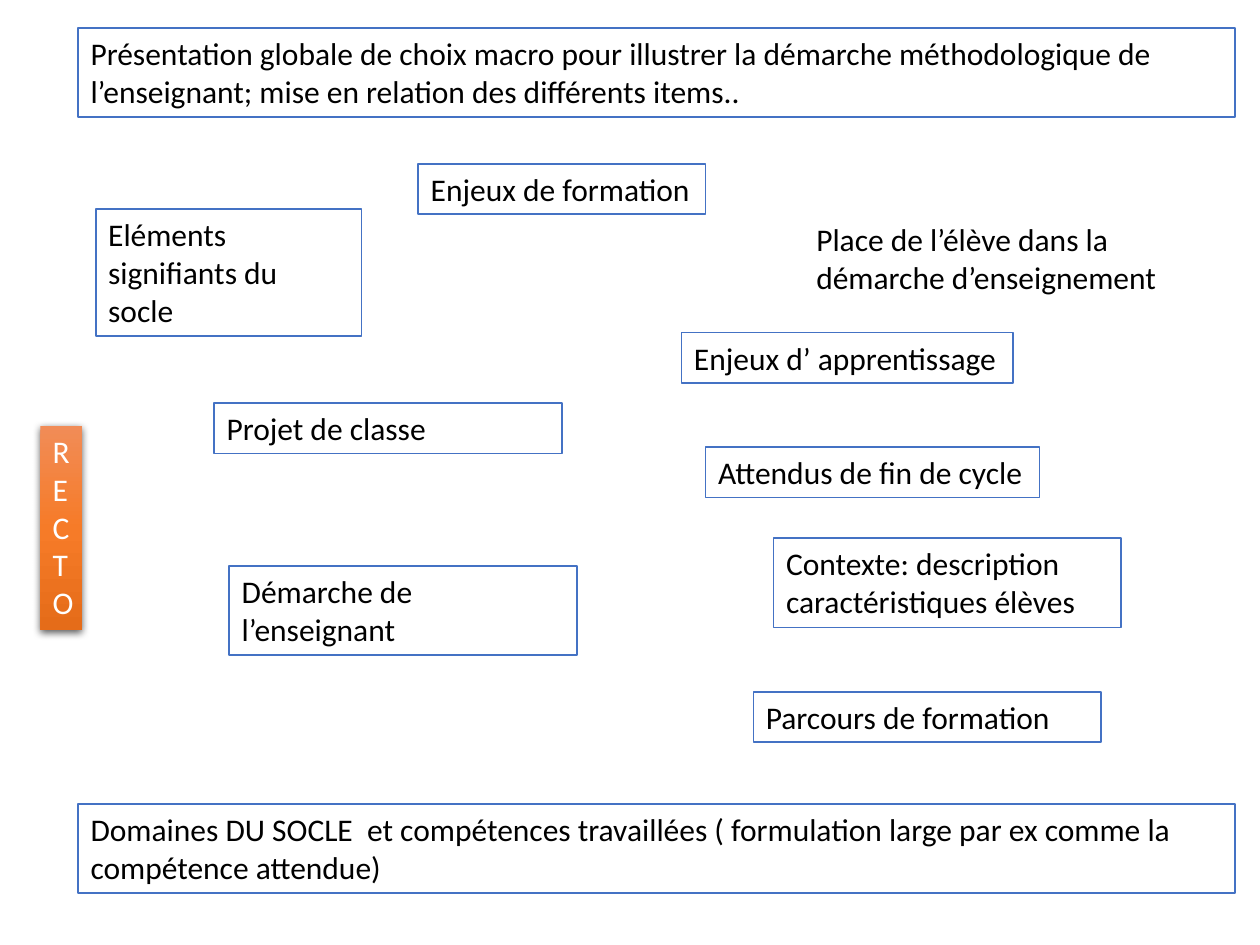
from copy import deepcopy
from dataclasses import dataclass

from lxml.etree import SubElement
from pptx import Presentation
from pptx.dml.color import RGBColor
from pptx.enum.shapes import MSO_SHAPE as Shape
from pptx.enum.text import MSO_ANCHOR as Anchor, MSO_AUTO_SIZE as AutoSize, PP_ALIGN as Align
from pptx.oxml.ns import qn
from pptx.util import Inches, Pt

WHITE = RGBColor(0xFF, 0xFF, 0xFF)
BLACK = RGBColor(0x00, 0x00, 0x00)
BLUE = RGBColor(0x44, 0x72, 0xC4)
ORANGES = (
    (0, RGBColor(0xF1, 0x8C, 0x57)),
    (0.5, RGBColor(0xF6, 0x7B, 0x28)),
    (1, RGBColor(0xE5, 0x6C, 0x19)),
)
ONE_LINE, TWO_LINES = 0.4, 0.71
BANNER_LEFT, BANNER_WIDTH = 0.62, 9.18
CARD_WIDTH = 2.76


@dataclass(frozen=True)
class Card:
    text: str
    left: float
    top: float
    width: float = CARD_WIDTH
    height: float = ONE_LINE
    wrap: bool = True
    grow: bool = True


CARDS = (
    Card("Domaines DU SOCLE  et compétences travaillées ( formulation large par ex comme la compétence attendue)",
         BANNER_LEFT, 6.38, BANNER_WIDTH, TWO_LINES),
    Card("Projet de classe", 1.7, 3.2),
    Card("Contexte: description caractéristiques élèves", 6.14, 4.27, height=TWO_LINES),
    Card("Démarche de l’enseignant", 1.82, 4.49, height=TWO_LINES),
    Card("Enjeux de formation", 3.32, 1.3, 2.28, wrap=False),
    Card("Attendus de fin de cycle", 5.6, 3.55, 2.65, wrap=False),
    Card("Eléments signifiants du socle", 0.76, 1.66, 2.11, 1.01, grow=False),
    Card("Parcours de formation", 5.98, 5.49),
    Card("Présentation globale de choix macro pour illustrer la démarche méthodologique de "
         "l’enseignant; mise en relation des différents items..",
         BANNER_LEFT, 0.22, BANNER_WIDTH, TWO_LINES),
    Card("Enjeux d’ apprentissage", 5.41, 2.64, 2.63, wrap=False),
)
RECTO = Card("RECTO", 0.32, 3.38, 0.33, 1.62)
PUPIL_NOTE = Card("Place de l’élève dans la démarche d’enseignement", 6.38, 1.7, 3.21, TWO_LINES)


def bounds(card: Card) -> tuple:
    return tuple(Inches(v) for v in (card.left, card.top, card.width, card.height))


def write(sp, card: Card, lines, color: RGBColor) -> None:
    tf = sp.text_frame
    tf.word_wrap = card.wrap
    tf.auto_size = AutoSize.SHAPE_TO_FIT_TEXT if card.grow else AutoSize.NONE
    tf.vertical_anchor = Anchor.TOP
    for i, line in enumerate(lines):
        p = tf.add_paragraph() if i else tf.paragraphs[0]
        p.alignment = Align.LEFT
        r = p.add_run()
        r.text = line
        r.font.name = "Calibri"
        r.font.size = Pt(18)
        r.font.color.rgb = color


def add_rectangle(s, card: Card):
    sp = s.shapes.add_shape(Shape.RECTANGLE, *bounds(card))
    sp.shadow.inherit = False
    return sp


def add_card(s, card: Card) -> None:
    sp = add_rectangle(s, card)
    sp.fill.solid()
    sp.fill.fore_color.rgb = WHITE
    sp.line.color.rgb = BLUE
    sp.line.width = Pt(1)
    write(sp, card, [card.text], BLACK)


def add_gradient(sp) -> None:
    sp.fill.gradient()
    sp.fill.gradient_angle = 270
    stop_list = sp._element.spPr.find(qn("a:gradFill")).find(qn("a:gsLst"))
    stop_list.insert(1, deepcopy(stop_list[0]))
    for stop, (position, color) in zip(sp.fill.gradient_stops, ORANGES):
        stop.position = position
        stop.color.rgb = color


def add_shadow(sp) -> None:
    effects = sp._element.spPr.find(qn("a:effectLst"))
    shadow = SubElement(effects, qn("a:outerShdw"), blurRad=str(Pt(4.5)),
                        dist=str(Pt(1.5)), dir="5400000", rotWithShape="0")
    color = SubElement(shadow, qn("a:srgbClr"), val=str(BLACK))
    SubElement(color, qn("a:alpha"), val="63000")


def add_recto(s, card: Card) -> None:
    sp = add_rectangle(s, card)
    add_gradient(sp)
    sp.line.fill.background()
    add_shadow(sp)
    write(sp, card, card.text, WHITE)


def main() -> None:
    prs = Presentation()
    prs.slide_width, prs.slide_height = Inches(10), Inches(7.5)
    s = prs.slides.add_slide(prs.slide_layouts[6])
    for card in CARDS:
        add_card(s, card)
    add_recto(s, RECTO)
    note = s.shapes.add_textbox(*bounds(PUPIL_NOTE))
    write(note, PUPIL_NOTE, [PUPIL_NOTE.text], BLACK)
    prs.save("out.pptx")


if __name__ == "__main__":
    main()
